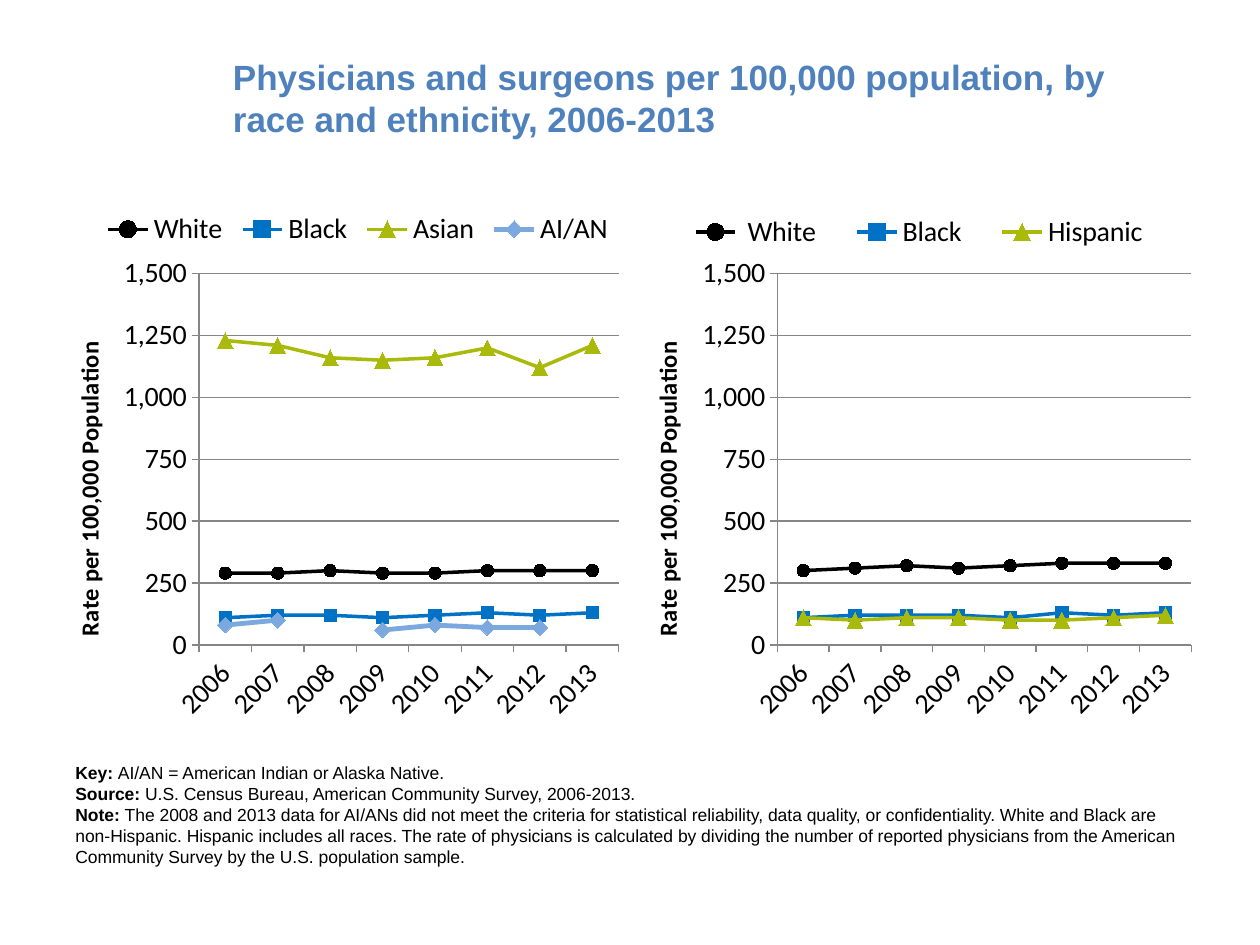
from lxml import etree
from pptx import Presentation
from pptx.chart.data import CategoryChartData
from pptx.dml.color import RGBColor
from pptx.enum.chart import XL_CHART_TYPE, XL_LEGEND_POSITION, XL_MARKER_STYLE, XL_TICK_MARK
from pptx.enum.text import MSO_ANCHOR
from pptx.oxml.ns import qn
from pptx.util import Inches, Pt

LINE_MARKERS = XL_CHART_TYPE.LINE_MARKERS
TOP = XL_LEGEND_POSITION.TOP
OUTSIDE = XL_TICK_MARK.OUTSIDE
NO_TICK = XL_TICK_MARK.NONE
MIDDLE = MSO_ANCHOR.MIDDLE
CIRCLE = XL_MARKER_STYLE.CIRCLE
SQUARE = XL_MARKER_STYLE.SQUARE
TRIANGLE = XL_MARKER_STYLE.TRIANGLE
DIAMOND = XL_MARKER_STYLE.DIAMOND

COLORS = {
    "title": "4F81BD",
    "text": "000000",
    "grid": "868686",
    "white": "000000",
    "black": "0072C6",
    "third": "AABA0A",
    "aian": "7BA8DF",
}
STYLES = [
    ("white", CIRCLE, 7, 2),
    ("black", SQUARE, 7, 2),
    ("third", TRIANGLE, 9, 2),
    ("aian", DIAMOND, 9, 2.75),
]
YEARS = [str(year) for year in range(2006, 2014)]
RACE = [
    ("White", [290, 290, 300, 290, 290, 300, 300, 300]),
    ("Black", [110, 120, 120, 110, 120, 130, 120, 130]),
    ("Asian", [1230, 1210, 1160, 1150, 1160, 1200, 1120, 1210]),
    ("AI/AN", [80, 100, None, 60, 80, 70, 70, None]),
]
ETHNICITY = [
    (" White", [300, 310, 320, 310, 320, 330, 330, 330]),
    ("Black", [110, 120, 120, 120, 110, 130, 120, 130]),
    ("Hispanic", [110, 100, 110, 110, 100, 100, 110, 120]),
]
NOTES = [
    ("Key: ", "AI/AN = American Indian or Alaska Native."),
    ("Source: ", "U.S. Census Bureau, American Community Survey, 2006-2013."),
    ("Note: ", "The 2008 and 2013 data for AI/ANs did not meet the criteria for "
     "statistical reliability, data quality, or confidentiality. White and Black are "
     "non-Hispanic. Hispanic includes all races. The rate of physicians is calculated by "
     "dividing the number of reported physicians from the American Community Survey by "
     "the U.S. population sample."),
]


def rgb(name):
    return RGBColor.from_string(COLORS[name])


def set_font(font, size, name, color="text", bold=False):
    font.size = Pt(size)
    font.name = name
    font.bold = bold
    font.color.rgb = rgb(color)


def add_text_frame(slide, box):
    tf = slide.shapes.add_textbox(*map(Inches, box)).text_frame
    tf.word_wrap = True
    return tf


def add_run(p, text, size, color="text", bold=False):
    r = p.add_run()
    r.text = text
    set_font(r.font, size, "Arial", color, bold)


def add_title(slide, box):
    tf = add_text_frame(slide, box)
    tf.vertical_anchor = MIDDLE
    add_run(tf.paragraphs[0],
            "Physicians and surgeons per 100,000 population, by race and ethnicity, 2006-2013",
            20, "title", True)


def add_notes(slide, box):
    tf = add_text_frame(slide, box)
    for i, (label, text) in enumerate(NOTES):
        p = tf.add_paragraph() if i else tf.paragraphs[0]
        add_run(p, label, 10, bold=True)
        add_run(p, text, 10)


def set_layout(parent, after, box, inner=False):
    for old in parent.findall(qn("c:layout")):
        parent.remove(old)
    layout = etree.Element(qn("c:layout"))
    manual = etree.SubElement(layout, qn("c:manualLayout"))
    settings = [("layoutTarget", "inner")] if inner else []
    settings += [("xMode", "edge"), ("yMode", "edge")]
    settings += zip("xywh", box)
    for tag, value in settings:
        etree.SubElement(manual, qn(f"c:{tag}")).set("val", str(value))
    if after is None:
        parent.insert(0, layout)
    else:
        after.addnext(layout)


def style_axes(chart, label_step):
    cat, val = chart.category_axis, chart.value_axis
    for axis in (cat, val):
        axis.major_tick_mark = OUTSIDE
        axis.minor_tick_mark = NO_TICK
        axis.format.line.color.rgb = rgb("grid")
        set_font(axis.tick_labels.font, 16, "Calibri")
    body = cat._element.find(qn("c:txPr")).find(qn("a:bodyPr"))
    body.set("rot", "-2700000")
    skip = etree.Element(qn("c:tickLblSkip"))
    skip.set("val", str(label_step))
    cat._element.find(qn("c:noMultiLvlLbl")).addprevious(skip)

    val.minimum_scale, val.maximum_scale, val.major_unit = 0, 1500, 250
    val.has_major_gridlines = True
    val.major_gridlines.format.line.color.rgb = rgb("grid")
    val.tick_labels.number_format = "#,##0"
    val.tick_labels.number_format_is_linked = False
    r = val.axis_title.text_frame.paragraphs[0].add_run()
    r.text = "Rate per 100,000 Population"
    set_font(r.font, 14, "Calibri", bold=True)


def add_rate_chart(slide, box, data, plot, legend, label_step):
    chart_data = CategoryChartData(number_format="#,##0")
    chart_data.categories = YEARS
    for name, values in data:
        chart_data.add_series(name, values)
    chart = slide.shapes.add_chart(LINE_MARKERS, *map(Inches, box), chart_data).chart
    set_font(chart.font, 10, "Arial")
    chart.has_title = False
    chart.has_legend = True
    chart.legend.position = TOP
    chart.legend.include_in_layout = False
    set_font(chart.legend.font, 16, "Calibri")
    style_axes(chart, label_step)
    for series, (color, marker, size, width) in zip(chart.plots[0].series, STYLES):
        series.smooth = False
        series.format.line.color.rgb = rgb(color)
        series.format.line.width = Pt(width)
        series.marker.style = marker
        series.marker.size = size
        series.marker.format.fill.solid()
        series.marker.format.fill.fore_color.rgb = rgb(color)
        series.marker.format.line.color.rgb = rgb(color)
    set_layout(chart._chartSpace.chart.plotArea, None, plot, inner=True)
    key = chart.legend._element
    set_layout(key, key.find(qn("c:legendPos")), legend)


def main():
    prs = Presentation()
    prs.slide_width, prs.slide_height = Inches(10), Inches(7.5)
    slide = prs.slides.add_slide(prs.slide_layouts[6])
    add_title(slide, (1.75, 0.3, 7.75, 0.95))
    add_rate_chart(slide, (5, 1.6, 4.5, 4.4), ETHNICITY,
                   (0.26, 0.13, 0.73, 0.67), (0.06, 0.01, 0.9, 0.09), 2)
    add_rate_chart(slide, (0.5, 1.6, 4.5, 4.4), RACE,
                   (0.24, 0.13, 0.74, 0.67), (0.06, 0.01, 0.92, 0.08), 1)
    add_notes(slide, (0.5, 6, 9, 0.94))
    prs.save("out.pptx")


if __name__ == "__main__":
    main()
